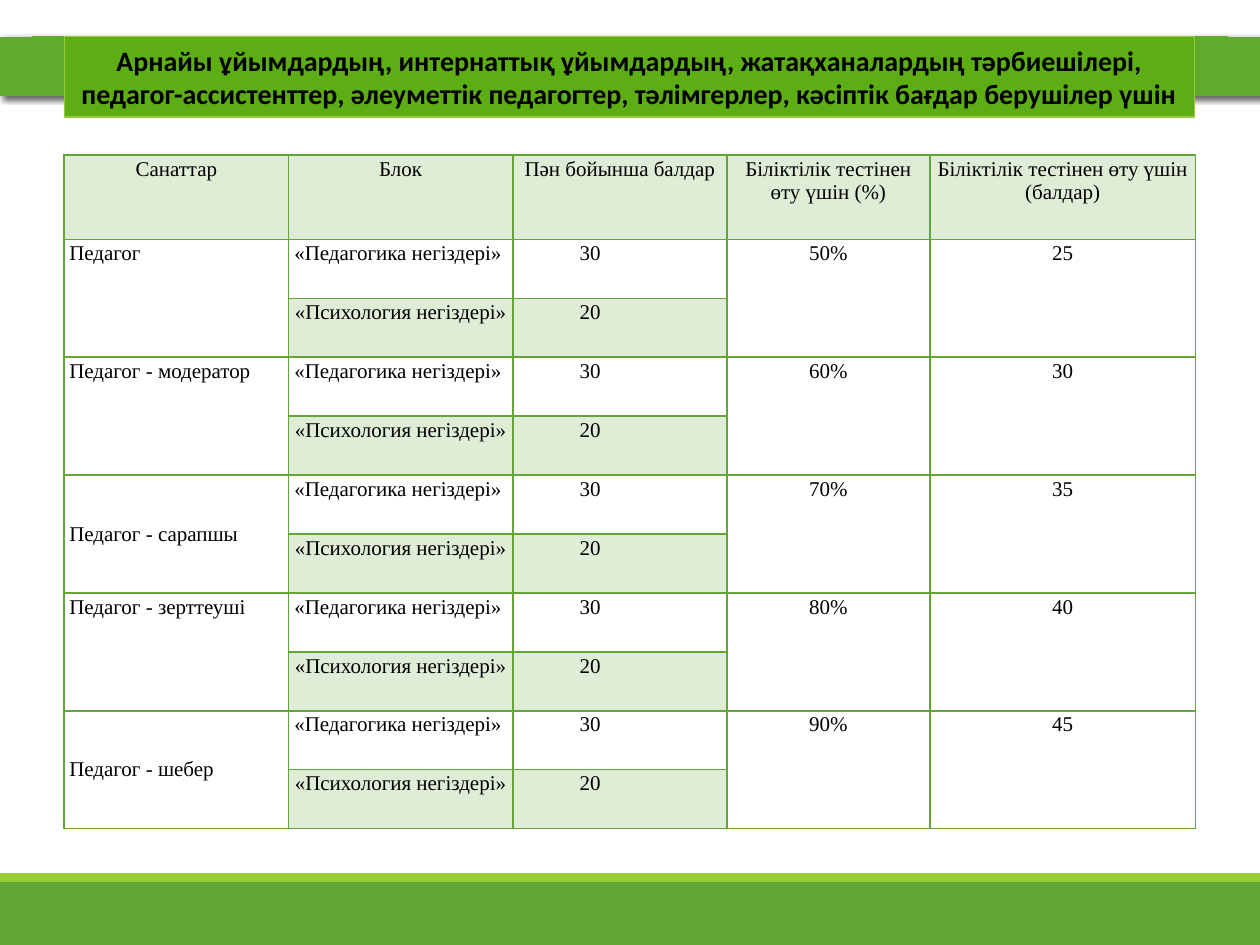
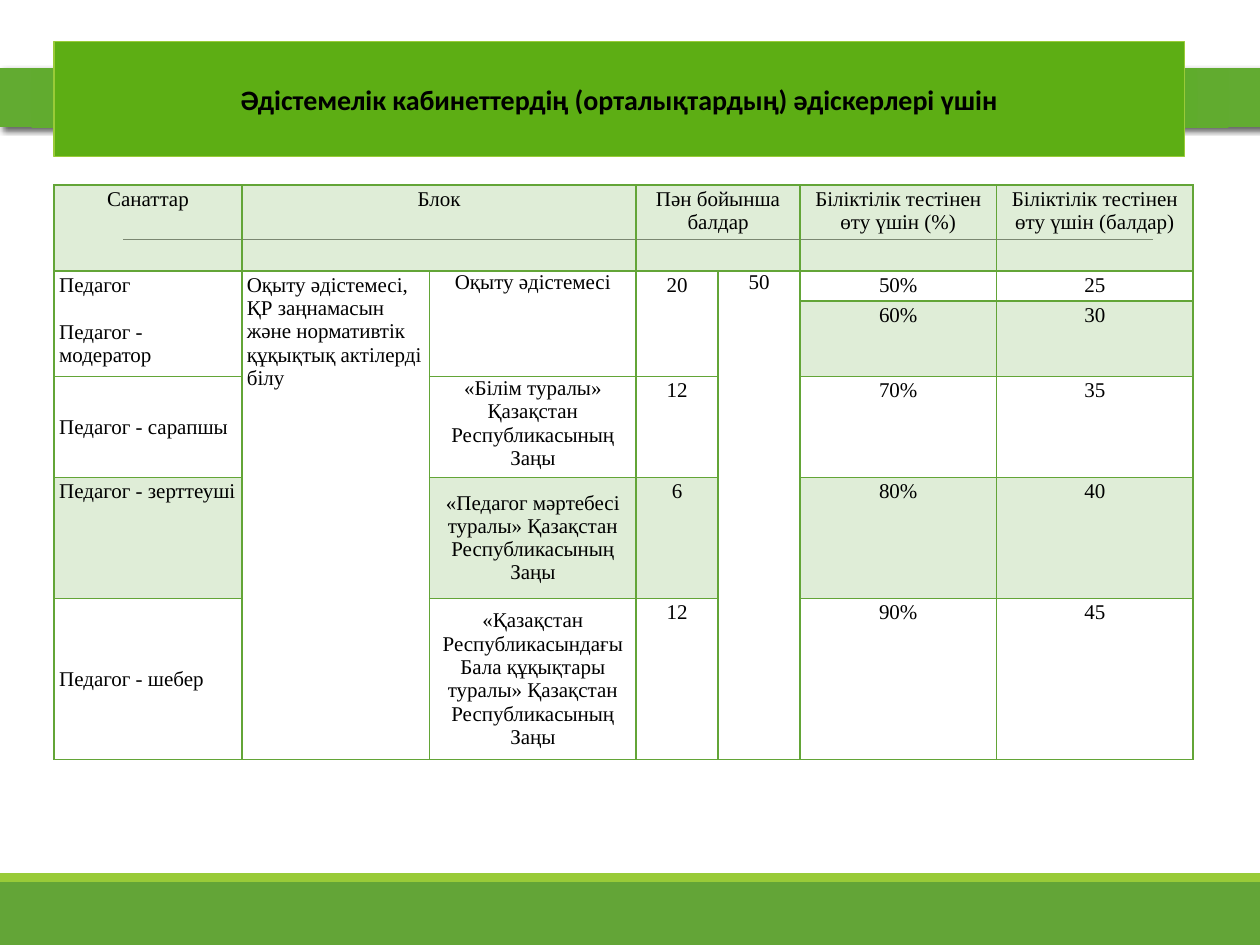
from pptx import Presentation
from pptx.dml.color import RGBColor as Rgb
from pptx.enum.shapes import MSO_CONNECTOR as Link, MSO_SHAPE as Form
from pptx.enum.text import MSO_ANCHOR as Anchor, PP_ALIGN as Align
from pptx.oxml import parse_xml
from pptx.oxml.ns import nsdecls, qn
from pptx.util import Inches, Pt
from lxml.etree import SubElement

COLORS = {
    "green": "63A537", "lime": "99CB38", "title": "5DAE14",
    "rule": "808080", "text": "000000",
}
BAND = [(0, "59A924"), (34, "5BA827"), (70, "5BAD25"), (100, "62AB31")]
PAD = (0.04, 0.02)
SLIM = (0.05, 0)
HEADS = ["Санаттар", "Блок", "Пән бойынша балдар",
         "Біліктілік тестінен өту үшін (%)",
         "Біліктілік тестінен өту үшін (балдар)"]
RANKS = ["Педагог", "Педагог - модератор", "Педагог - сарапшы",
         "Педагог - зерттеуші", "Педагог - шебер"]
MIDDLE = {"Педагог - сарапшы", "Педагог - шебер"}
RATES = ["50%", "60%", "70%", "80%", "90%"]
MARKS = ["25", "30", "35", "40", "45"]


def color(name):
    return Rgb.from_string(COLORS[name])


def write(frame, text, font="Times New Roman", size=12, bold=False,
          align=Align.CENTER, anchor=Anchor.TOP, indent=0, gap=0):
    """Fill a frame, one paragraph a line; gap is the space before the last."""
    frame.word_wrap = True
    lines = text.split("\n")
    for i, line in enumerate(lines):
        par = frame.paragraphs[0] if i == 0 else frame.add_paragraph()
        par.alignment = align
        if indent:
            par._p.get_or_add_pPr().set("indent", str(Inches(indent)))
        if gap and i == len(lines) - 1:
            par.space_before = Pt(gap)
        run = par.add_run()
        run.text = line
        run.font.name, run.font.size, run.font.bold = font, Pt(size), bold
        run.font.color.rgb = color("text")
    return anchor


class Deck:
    def __init__(self):
        self.prs = Presentation()
        self.prs.slide_width, self.prs.slide_height = Inches(10), Inches(7.5)
        self.slide = None

    def start(self):
        """Add a slide with the shared footer and rule."""
        self.slide = self.prs.slides.add_slide(self.prs.slide_layouts[6])
        self.rect(0, 7, 10, 0.5, "green")
        self.rect(0, 6.93, 10, 0.07, "lime")
        self.rule(0.98, 9.15, 1.9)

    def rect(self, x, y, w, h, fill, line=None):
        box = self.slide.shapes.add_shape(
            Form.RECTANGLE, Inches(x), Inches(y), Inches(w), Inches(h))
        box.shadow.inherit = False
        box.fill.solid()
        box.fill.fore_color.rgb = color(fill)
        if line:
            box.line.color.rgb = color(line)
            box.line.width = Pt(0.75)
        else:
            box.line.fill.background()
        return box

    def rule(self, left, right, y):
        line = self.slide.shapes.add_connector(
            Link.STRAIGHT, Inches(left), Inches(y), Inches(right), Inches(y))
        line.line.color.rgb = color("rule")
        line.line.width = Pt(0.5)
        SubElement(line._element.spPr, qn("a:effectLst"))

    def band(self, y):
        """Draw the full-width strip with a radial gradient and a shadow."""
        props = self.rect(0, y, 10, 0.47, "green")._element.spPr
        stops = "".join(
            f'<a:gs pos="{pos * 1000}"><a:srgbClr val="{tone}"/></a:gs>'
            for pos, tone in BAND)
        props.replace(props.find(qn("a:solidFill")), parse_xml(
            f'<a:gradFill {nsdecls("a")}><a:gsLst>{stops}</a:gsLst>'
            '<a:path path="circle"><a:fillToRect l="100000" t="100000" '
            'r="100000" b="100000"/></a:path></a:gradFill>'))
        props.find(qn("a:effectLst")).append(parse_xml(
            f'<a:outerShdw {nsdecls("a")} blurRad="{Pt(3.5)}" '
            f'dist="{Pt(2)}" dir="2700000" rotWithShape="0">'
            '<a:srgbClr val="000000"><a:alpha val="60000"/></a:srgbClr>'
            '</a:outerShdw>'))

    def title(self, text, x, y, h):
        box = self.rect(x, y, 8.97, h, "title", "lime")
        box.text_frame.vertical_anchor = write(
            box.text_frame, text, font="Calibri", size=16, bold=True,
            anchor=Anchor.MIDDLE)

    def table(self, x, y, cols, rows):
        grid = self.slide.shapes.add_table(
            len(rows), len(cols), Inches(x), Inches(y),
            Inches(sum(cols)), Inches(sum(rows))).table
        grid.first_row = grid.horz_banding = False
        for col, width in zip(grid.columns, cols):
            col.width = Inches(width)
        for row, height in zip(grid.rows, rows):
            row.height = Inches(height)
        for cell in grid.iter_cells():
            self.border(cell)
            cell.fill.background()
        return grid

    def border(self, cell):
        props = cell._tc.get_or_add_tcPr()
        for side in "LRTB":
            line = SubElement(props, qn(f"a:ln{side}"), w=str(Pt(1)))
            fill = SubElement(line, qn("a:solidFill"))
            SubElement(fill, qn("a:srgbClr"), val=COLORS["green"])

    def cell(self, grid, row, col, text, span=(1, 1), tint=False, pad=PAD,
             **style):
        cell = grid.cell(row, col)
        if span != (1, 1):
            cell.merge(grid.cell(row + span[0] - 1, col + span[1] - 1))
        cell.margin_left = cell.margin_right = Inches(pad[0])
        cell.margin_top = cell.margin_bottom = Inches(pad[1])
        cell.vertical_anchor = write(cell.text_frame, text, **style)
        if tint:
            cell.fill.solid()
            cell.fill.fore_color.rgb = color("green")
            tone = cell._tc.tcPr.find(qn("a:solidFill"))[0]
            SubElement(tone, qn("a:alpha"), val="20000")

    def rank(self, grid, row, name, **style):
        anchor = Anchor.MIDDLE if name in MIDDLE else Anchor.TOP
        self.cell(grid, row, 0, name, align=Align.LEFT, anchor=anchor, **style)


def tutors(deck):
    deck.start()
    deck.band(0.29)
    deck.title("Арнайы ұйымдардың, интернаттық ұйымдардың, жатақханалардың "
               "тәрбиешілері, педагог-ассистенттер, әлеуметтік педагогтер, "
               "тәлімгерлер, кәсіптік бағдар берушілер үшін", 0.51, 0.29, 0.64)
    grid = deck.table(0.51, 1.23, [1.78, 1.78, 1.7, 1.61, 2.11],
                      [0.67] + [0.468] * 10)
    for col, head in enumerate(HEADS):
        deck.cell(grid, 0, col, head, tint=True)
    blocks = [("«Педагогика негіздері» ", "30"),
              ("«Психология негіздері»", "20")]
    for i, (name, rate, mark) in enumerate(zip(RANKS, RATES, MARKS)):
        top = 1 + 2 * i
        deck.rank(grid, top, name, span=(2, 1))
        deck.cell(grid, top, 3, rate, span=(2, 1))
        deck.cell(grid, top, 4, mark, span=(2, 1))
        for step, (block, points) in enumerate(blocks):
            deck.cell(grid, top + step, 1, block, tint=step == 1)
            deck.cell(grid, top + step, 2, points, tint=step == 1,
                      align=Align.LEFT, indent=0.49)


def experts(deck):
    deck.start()
    deck.band(0.54)
    deck.title("Әдістемелік кабинеттердің (орталықтардың) әдіскерлері үшін",
               0.43, 0.33, 0.91)
    grid = deck.table(0.43, 1.47, [1.49, 1.49, 1.64, 0.65, 0.65, 1.56, 1.56],
                      [0.68, 0.24, 0.6, 0.8, 0.96, 1.28])
    for col, head, wide in zip([0, 1, 3, 5, 6], HEADS, [1, 2, 2, 1, 1]):
        deck.cell(grid, 0, col, head, span=(1, wide), tint=True)
    deck.cell(grid, 1, 0, "\n".join(RANKS[:2]), span=(2, 1),
              align=Align.LEFT, gap=13.5)
    deck.cell(grid, 1, 1, "Оқыту әдістемесі,\nҚР заңнамасын және нормативтік "
              "құқықтық актілерді білу", span=(5, 1), align=Align.LEFT)
    deck.cell(grid, 1, 2, "Оқыту әдістемесі", span=(2, 1), pad=SLIM)
    deck.cell(grid, 1, 3, "20", span=(2, 1))
    deck.cell(grid, 1, 4, "50", span=(5, 1), pad=SLIM)
    for row, (rate, mark) in enumerate(zip(RATES, MARKS), 1):
        deck.cell(grid, row, 5, rate, tint=row % 2 == 0)
        deck.cell(grid, row, 6, mark, tint=row % 2 == 0)
    laws = [
        ("«Білім туралы» Қазақстан Республикасының Заңы", "12", Anchor.TOP),
        ("«Педагог мәртебесі туралы» Қазақстан Республикасының Заңы", "6",
         Anchor.MIDDLE),
        ("«Қазақстан Республикасындағы Бала құқықтары туралы» Қазақстан "
         "Республикасының Заңы", "12", Anchor.MIDDLE),
    ]
    for row, (name, (law, points, anchor)) in enumerate(
            zip(RANKS[2:], laws), 3):
        tint = row % 2 == 0
        deck.rank(grid, row, name, tint=tint)
        deck.cell(grid, row, 2, law, tint=tint, pad=SLIM, anchor=anchor)
        deck.cell(grid, row, 3, points, tint=tint)


def main():
    deck = Deck()
    tutors(deck)
    experts(deck)
    deck.prs.save("out.pptx")


if __name__ == "__main__":
    main()
